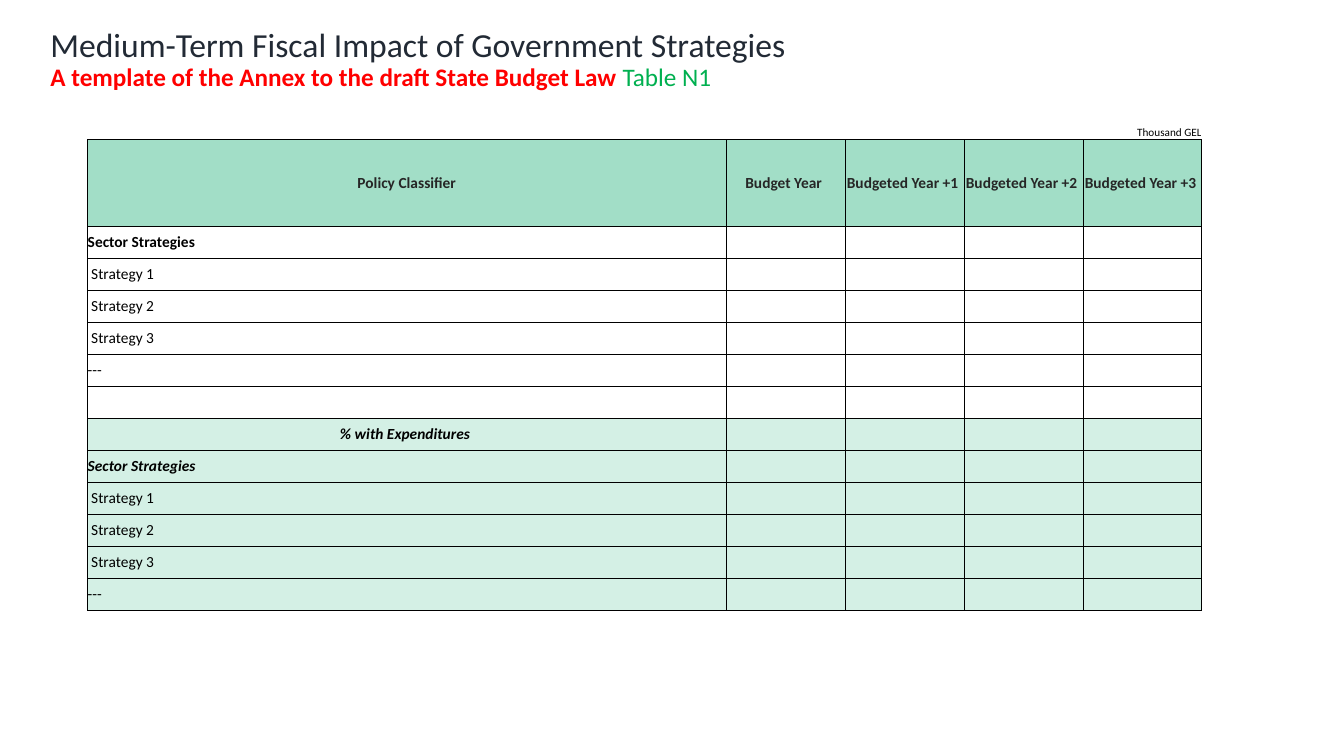
from pptx import Presentation, util as u
from pptx.dml.color import RGBColor
from pptx.enum import text as t
from pptx.oxml import parse_xml
from pptx.oxml.ns import nsdecls

INK = RGBColor(0x22, 0x2A, 0x35)
RED = RGBColor(0xFF, 0x00, 0x00)
GREEN = RGBColor(0x00, 0xB0, 0x50)
BLACK = RGBColor(0x00, 0x00, 0x00)
GREY = RGBColor(0x26, 0x26, 0x26)
WHITE = RGBColor(0xFF, 0xFF, 0xFF)
MINT = RGBColor(0xA2, 0xDE, 0xC7)
PALE = RGBColor(0xD4, 0xF0, 0xE5)

WIDE, HIGH = 13.33, 7.5
COLS = [6.33] + [1.18] * 4
UNIT, HEAD = 0.317, 0.86
LEFT, MID, RIGHT = t.PP_ALIGN.LEFT, t.PP_ALIGN.CENTER, t.PP_ALIGN.RIGHT
HEADS = ["Policy Classifier", "Budget Year "] + [
    f"Budgeted Year +{n} " for n in (1, 2, 3)]
ITEMS = [f" Strategy {n}" for n in (1, 2, 3)] + ["---"]
ROWS = (
    [("Sector Strategies", LEFT, True, False, None)]
    + [(item, LEFT, False, False, None) for item in ITEMS + [""]]
    + [("% with Expenditures ", MID, True, True, PALE),
       ("Sector Strategies", LEFT, True, True, PALE)]
    + [(item, LEFT, False, False, PALE) for item in ITEMS]
)


def add_run(para, words, size, color, bold=False, slant=False):
    run = para.add_run()
    run.text = words
    font = run.font
    font.name, font.size = "Calibri", u.Pt(size)
    font.bold, font.italic = bold, slant
    font.color.rgb = color


def write(cell, words, align, size, color, bold=False, slant=False):
    para = cell.text_frame.paragraphs[0]
    para.alignment = align
    add_run(para, words, size, color, bold, slant)


def dress(cell, fill, sides):
    cell.margin_left = cell.margin_right = 0
    cell.margin_top = cell.margin_bottom = 0
    cell.vertical_anchor = t.MSO_ANCHOR.MIDDLE
    if fill is None:
        cell.fill.background()
    else:
        cell.fill.solid()
        cell.fill.fore_color.rgb = fill
    props = cell._tc.get_or_add_tcPr()
    for spot, side in enumerate(sides):
        props.insert(spot, parse_xml(
            f'<a:ln{side} {nsdecls("a")} w="{u.Pt(0.5)}"><a:solidFill>'
            f'<a:srgbClr val="{BLACK}"/></a:solidFill></a:ln{side}>'))


def add_title(slide, left, top, width, height):
    title = slide.shapes.title
    title.left, title.top = u.Inches(left), u.Inches(top)
    title.width, title.height = u.Inches(width), u.Inches(height)
    frame = title.text_frame
    frame.auto_size = t.MSO_AUTO_SIZE.NONE
    frame.vertical_anchor = t.MSO_ANCHOR.MIDDLE
    para = frame.paragraphs[0]
    para.alignment, para.line_spacing = LEFT, 0.9
    add_run(para, "Medium-Term Fiscal Impact of Government Strategies", 24, INK)
    para.add_line_break()
    add_run(para, "A template of the Annex to the draft State Budget Law ",
            18, RED, True)
    add_run(para, "Table N1", 18, GREEN)


def add_grid(slide, left, top, width, height):
    count = len(ROWS) + 2
    table = slide.shapes.add_table(
        count, len(COLS), u.Inches(left), u.Inches(top),
        u.Inches(width), u.Inches(height)).table
    table.first_row = table.horz_banding = False
    for col, share in zip(table.columns, COLS):
        col.width = u.Inches(width * share / sum(COLS))
    for n, row in enumerate(table.rows):
        row.height = u.Inches(HEAD if n == 1 else UNIT)
    fills = [WHITE, MINT] + [row[-1] for row in ROWS]
    for n, fill in enumerate(fills):
        for cell in table.rows[n].cells:
            dress(cell, fill, "LRTB" if n else "B")

    note = table.cell(0, 3)
    note.merge(table.cell(0, 4))
    note.vertical_anchor = t.MSO_ANCHOR.BOTTOM
    write(note, "Thousand GEL", RIGHT, 8, BLACK)
    for n, words in enumerate(HEADS):
        write(table.cell(1, n), words, MID, 11, GREY, True)
    for n, (words, align, bold, slant, _) in enumerate(ROWS, 2):
        if words:
            write(table.cell(n, 0), words, align, 11, BLACK, bold, slant)


def main():
    deck = Presentation()
    deck.slide_width, deck.slide_height = u.Inches(WIDE), u.Inches(HIGH)
    slide = deck.slides.add_slide(deck.slide_layouts[5])
    add_title(slide, 0.03 * WIDE, 0.03 * HIGH, 0.91 * WIDE, 0.1 * HIGH)
    add_grid(slide, 0.87, 1.07, sum(COLS), HEAD + UNIT * (len(ROWS) + 1))
    deck.save("out.pptx")


if __name__ == "__main__":
    main()
